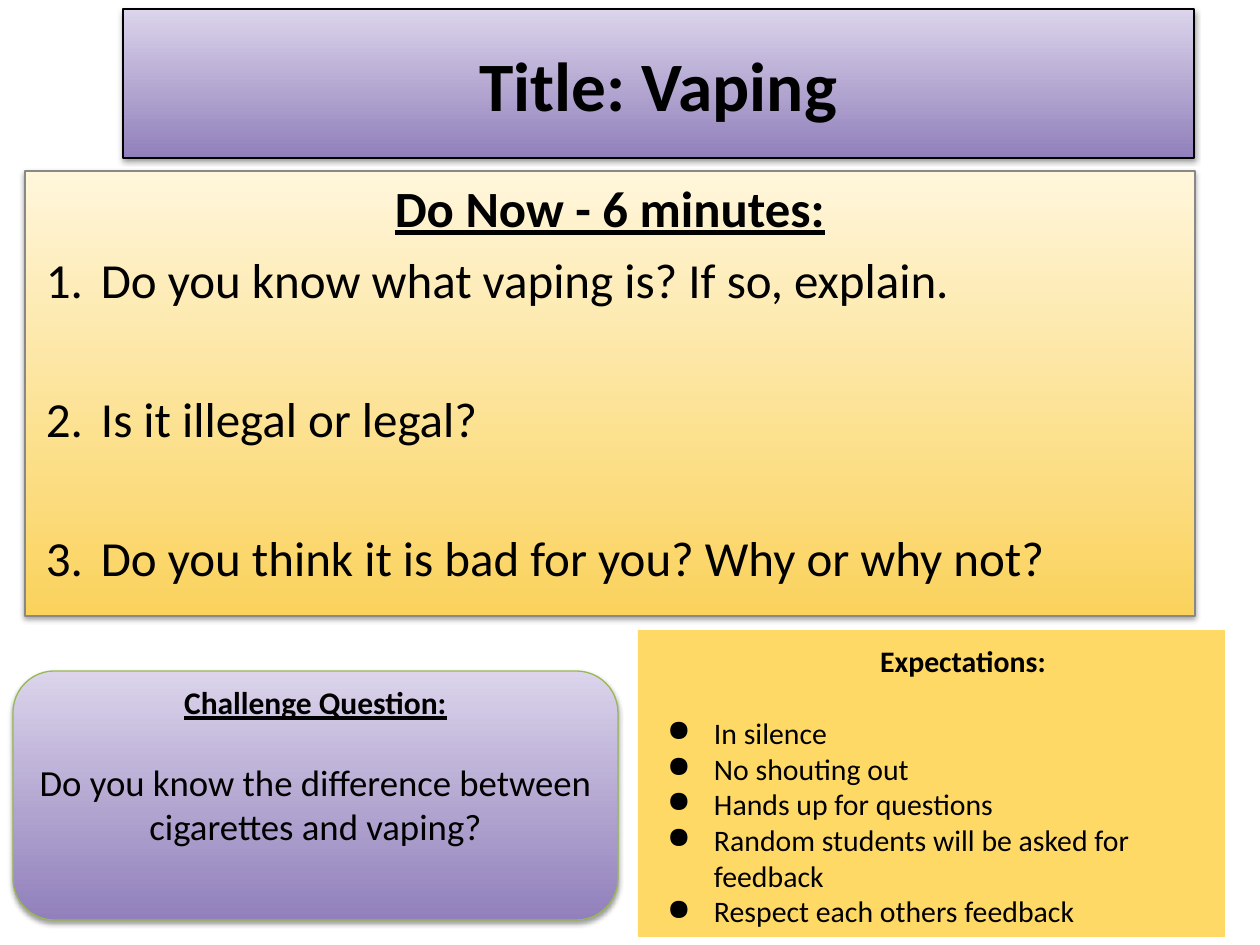
from lxml.etree import SubElement
from pptx import Presentation
from pptx.dml.color import RGBColor
from pptx.enum.shapes import MSO_SHAPE
from pptx.enum.text import MSO_ANCHOR, MSO_AUTO_SIZE, PP_ALIGN
from pptx.oxml.ns import qn
from pptx.util import Emu, Pt

PX_PER_INCH = 126
BLACK = "000000"
PURPLE = ("DBD4EB", "9180BB")
YELLOW = ("FFF6DB", "FAD25C")


def px(length):
    return Emu(round(length * 914400 / PX_PER_INCH))


def color(value):
    return RGBColor.from_string(value)


def place(shape, left, top, width, height):
    shape.left, shape.top = px(left), px(top)
    shape.width, shape.height = px(width), px(height)


def add_panel(slide, kind, left, top, width, height):
    return slide.shapes.add_shape(kind, px(left), px(top), px(width), px(height))


def set_gradient(shape, stops, line):
    """Give a top-to-bottom gradient, a thin outline and a soft shadow."""
    shape.fill.gradient()
    shape.fill.gradient_angle = 270
    for stop, value in zip(shape.fill.gradient_stops, stops):
        stop.color.rgb = color(value)
    shape.line.color.rgb = color(line)
    shape.line.width = Pt(0.75)
    shape.shadow.inherit = False
    effects = shape._element.spPr.find(qn("a:effectLst"))
    shadow = SubElement(effects, qn("a:outerShdw"), blurRad=str(Pt(3.1)),
                        dist=str(Pt(1.6)), dir="5400000", rotWithShape="0")
    shade = SubElement(shadow, qn("a:srgbClr"), val=BLACK)
    SubElement(shade, qn("a:alpha"), val="38000")


def set_frame(shape, anchor=MSO_ANCHOR.TOP, top=6, bottom=6):
    frame = shape.text_frame
    frame.word_wrap = True
    frame.auto_size = MSO_AUTO_SIZE.NONE
    frame.vertical_anchor = anchor
    frame.margin_left = frame.margin_right = px(13)
    frame.margin_top, frame.margin_bottom = px(top), px(bottom)
    return frame


def write(frame, text, size, bold=False, underline=False, align=PP_ALIGN.LEFT,
          before=0, indent=0, hanging=0, bullet=None):
    """Add a paragraph; bullet is a character, or "1." for numbering."""
    para = frame.paragraphs[0] if not frame.text else frame.add_paragraph()
    para.alignment = align
    para.space_before = Pt(before)
    properties = para._p.get_or_add_pPr()
    properties.set("marL", str(px(indent)))
    properties.set("indent", str(px(-hanging)))
    if bullet == "1.":
        SubElement(properties, qn("a:buFont"), typeface="Calibri")
        SubElement(properties, qn("a:buAutoNum"), type="arabicPeriod")
    elif bullet:
        SubElement(properties, qn("a:buChar"), char=bullet)
    span = para.add_run()
    span.text = text
    font = span.font
    font.name, font.size = "Calibri", Pt(size)
    font.bold, font.underline = bold, underline
    font.color.rgb = color(BLACK)


def add_title(slide):
    title = slide.shapes.title
    place(title, 123, 9, 1071, 149)
    set_gradient(title, PURPLE, BLACK)
    write(set_frame(title, MSO_ANCHOR.MIDDLE), "Title: Vaping", 39.6, bold=True,
          align=PP_ALIGN.CENTER)


def add_do_now(slide):
    panel = add_panel(slide, MSO_SHAPE.RECTANGLE, 25, 171, 1170, 445)
    set_gradient(panel, YELLOW, "888888")
    frame = set_frame(panel)
    write(frame, "Do Now - 6 minutes:", 29, bold=True, underline=True,
          align=PP_ALIGN.CENTER)
    questions = ["Do you know what vaping is? If so, explain.",
                 "Is it illegal or legal?",
                 "Do you think it is bad for you? Why or why not?"]
    for number, question in enumerate(questions):
        write(frame, question, 28, before=46 if number else 6.4,
              indent=63, hanging=55, bullet="1.")


def add_challenge(slide):
    panel = add_panel(slide, MSO_SHAPE.ROUNDED_RECTANGLE, 13, 671, 605, 249)
    set_gradient(panel, PURPLE, "97B853")
    frame = set_frame(panel, top=0)
    write(frame, "Challenge Question:", 18, bold=True, underline=True,
          align=PP_ALIGN.CENTER)
    write(frame, "Do you know the difference between cigarettes and vaping?", 21,
          align=PP_ALIGN.CENTER, before=22)


def add_expectations(slide):
    panel = add_panel(slide, MSO_SHAPE.RECTANGLE, 638, 630, 587, 307)
    panel.fill.solid()
    panel.fill.fore_color.rgb = color("FFD966")
    panel.line.fill.background()
    panel.shadow.inherit = False
    frame = set_frame(panel, top=13, bottom=13)
    write(frame, "Expectations:", 17, bold=True, align=PP_ALIGN.CENTER, indent=63)
    rules = ["In silence", "No shouting out", "Hands up for questions",
             "Random students will be asked for feedback",
             "Respect each others feedback"]
    for number, rule in enumerate(rules):
        write(frame, rule, 17, before=0 if number else 20.5,
              indent=63, hanging=47, bullet="●")


def main():
    deck = Presentation()
    deck.slide_width, deck.slide_height = px(1260), px(945)
    slide = deck.slides.add_slide(deck.slide_layouts[5])
    add_title(slide)
    add_do_now(slide)
    add_challenge(slide)
    add_expectations(slide)
    deck.save("out.pptx")


if __name__ == "__main__":
    main()
